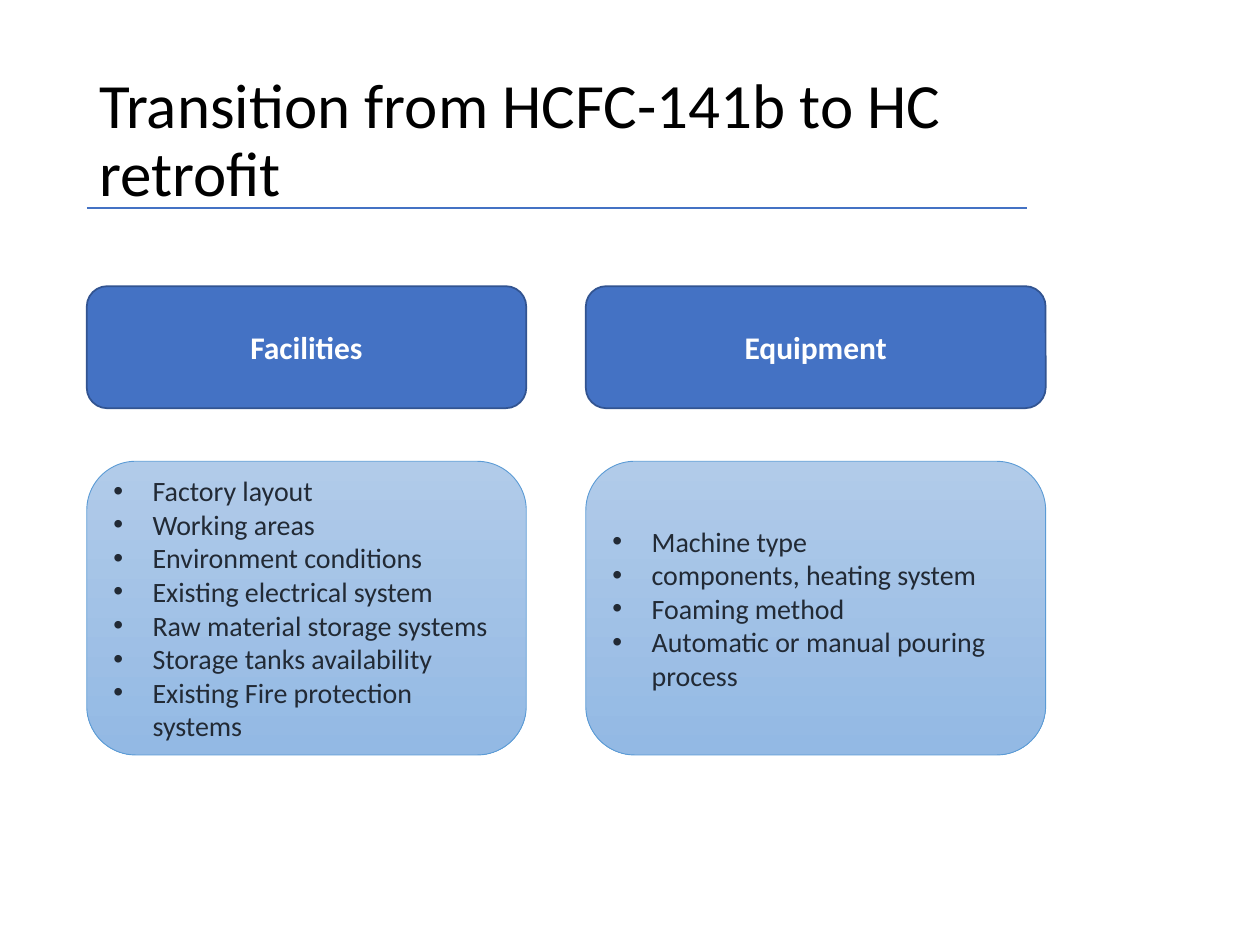
from lxml.etree import SubElement
from pptx import Presentation
from pptx.dml.color import RGBColor
from pptx.enum.shapes import MSO_CONNECTOR, MSO_SHAPE
from pptx.enum.text import MSO_ANCHOR, MSO_AUTO_SIZE, PP_ALIGN
from pptx.oxml.ns import qn
from pptx.util import Cm, Pt

TITLE = "Transition from HCFC-141b to HC\vretrofit"
# heading, left and width in cm, points
COLUMNS = [
    ("Facilities", 1.75, 8.86, [
        "Factory layout",
        "Working areas",
        "Environment conditions",
        "Existing electrical system",
        "Raw material storage systems",
        "Storage tanks availability",
        "Existing Fire protection systems",
    ]),
    ("Equipment", 11.81, 9.27, [
        "Machine type",
        "components, heating system",
        "Foaming method",
        "Automatic or manual pouring process",
    ]),
]
HEADING_TOP, HEADING_HEIGHT = 5.77, 2.46
LIST_TOP, LIST_HEIGHT = 9.3, 5.92
TITLE_LEFT, TITLE_WIDTH, RULE_Y = 1.75, 18.95, 4.19
INDENT = Cm(0.79)


def color(hex_code):
    return RGBColor.from_string(hex_code)


def style(paragraph, size, hex_code, bold=False):
    font = paragraph.font
    font.name, font.size, font.bold = "Calibri", Pt(size), bold
    font.color.rgb = color(hex_code)


def add_bullet(paragraph):
    props = paragraph._p.get_or_add_pPr()
    props.set("marL", str(INDENT))
    props.set("indent", str(-INDENT))
    SubElement(props, qn("a:buFont"), typeface="Arial")
    SubElement(props, qn("a:buChar"), char="•")


def add_box(slide, left, top, width, height, line_hex, line_width):
    box = slide.shapes.add_shape(MSO_SHAPE.ROUNDED_RECTANGLE,
                                 Cm(left), Cm(top), Cm(width), Cm(height))
    box.shadow.inherit = False
    box.line.color.rgb = color(line_hex)
    box.line.width = Pt(line_width)
    box.text_frame.word_wrap = True
    box.text_frame.vertical_anchor = MSO_ANCHOR.MIDDLE
    return box


def add_heading(slide, text, left, width):
    box = add_box(slide, left, HEADING_TOP, width, HEADING_HEIGHT, "325491", 1)
    box.fill.solid()
    box.fill.fore_color.rgb = color("4472C4")
    para = box.text_frame.paragraphs[0]
    para.text = text
    para.alignment = PP_ALIGN.CENTER
    style(para, 18, "FFFFFF", bold=True)


def add_list(slide, points, left, width):
    box = add_box(slide, left, LIST_TOP, width, LIST_HEIGHT, "5B9BD5", 0.5)
    box.fill.gradient()
    box.fill.gradient_angle = 270
    for stop, hex_code in zip(box.fill.gradient_stops, ("B1CBE9", "93B9E4")):
        stop.color.rgb = color(hex_code)
    frame = box.text_frame
    frame.text = "\n".join(points)
    for para in frame.paragraphs:
        para.alignment = PP_ALIGN.LEFT
        add_bullet(para)
        style(para, 16, "222A35")


def add_title(slide):
    rule = slide.shapes.add_connector(
        MSO_CONNECTOR.STRAIGHT, Cm(TITLE_LEFT), Cm(RULE_Y),
        Cm(TITLE_LEFT + TITLE_WIDTH), Cm(RULE_Y))
    rule.line.color.rgb = color("4472C4")
    rule.line.width = Pt(1)
    SubElement(rule._element.spPr, qn("a:effectLst"))

    title = slide.shapes.title
    title.left, title.top = Cm(TITLE_LEFT), Cm(1.02)
    title.width, title.height = Cm(TITLE_WIDTH), Cm(3.68)
    frame = title.text_frame
    frame.text = TITLE
    frame.word_wrap = True
    frame.auto_size = MSO_AUTO_SIZE.NONE
    frame.vertical_anchor = MSO_ANCHOR.MIDDLE
    para = frame.paragraphs[0]
    para.alignment = PP_ALIGN.LEFT
    para.line_spacing = 0.9
    style(para, 36, "000000")


def main():
    deck = Presentation()
    deck.slide_width, deck.slide_height = Cm(25.4), Cm(19.05)
    slide = deck.slides.add_slide(deck.slide_layouts.get_by_name("Title Only"))
    add_title(slide)
    for heading, left, width, points in COLUMNS:
        add_heading(slide, heading, left, width)
        add_list(slide, points, left, width)
    deck.save("out.pptx")


if __name__ == "__main__":
    main()
